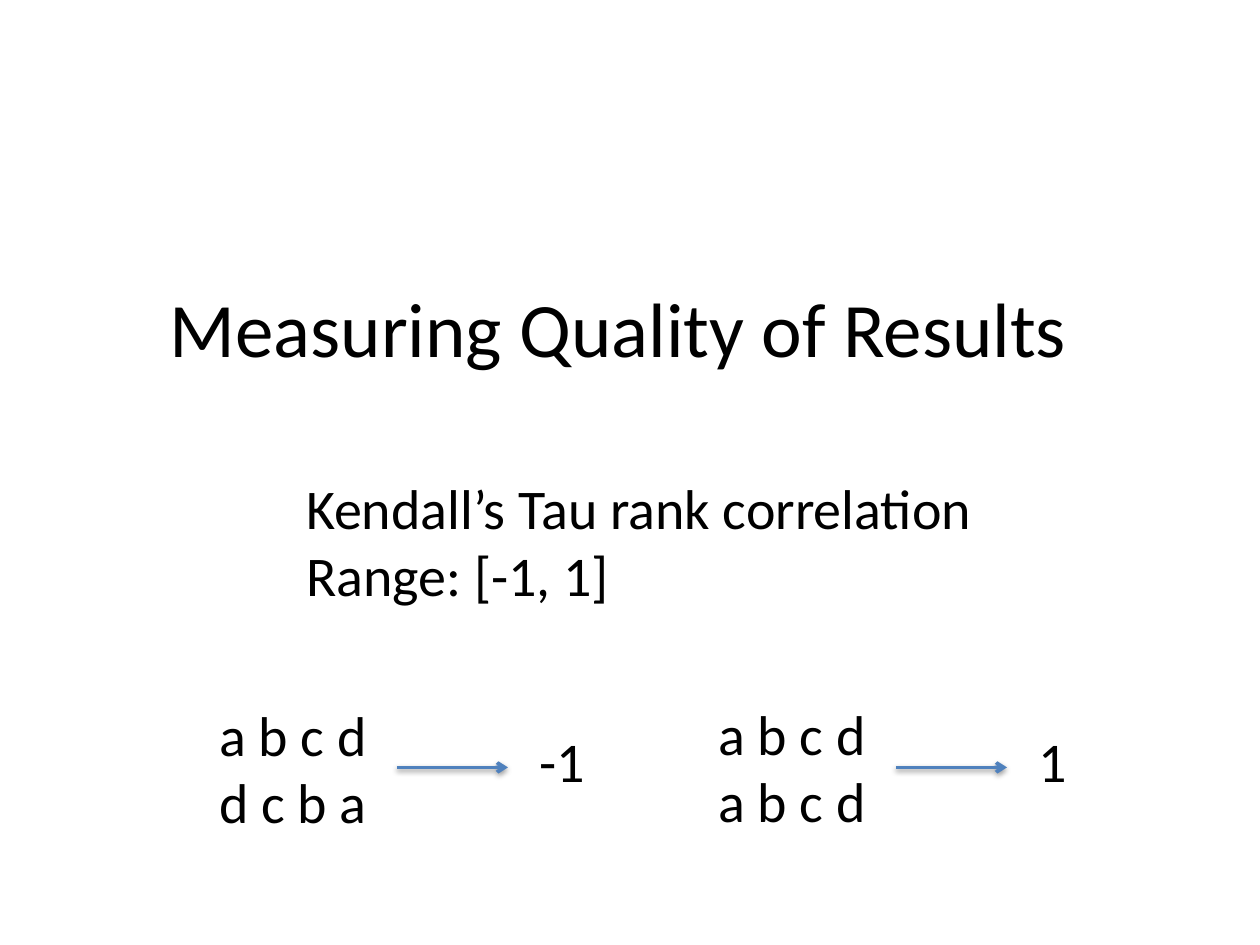
"""Build a slide on measuring result quality with Kendall's Tau."""
from dataclasses import dataclass

from pptx import Presentation, oxml
from pptx import util as u
from pptx.dml.color import RGBColor
from pptx.enum import shapes, text
from pptx.oxml import ns


@dataclass(frozen=True)
class Theme:
    """Colours, font and type sizes of the slide."""
    font: str = "Calibri"
    ink: RGBColor = RGBColor(0x00, 0x00, 0x00)
    accent: RGBColor = RGBColor(0x4F, 0x81, 0xBD)
    title: u.Pt = u.Pt(44)
    body: u.Pt = u.Pt(32)
    line: u.Pt = u.Pt(2)


THEME = Theme()
SHADOW = (
    f'<a:effectLst {ns.nsdecls("a")}>'
    '<a:outerShdw blurRad="40000" dist="20000" dir="5400000" rotWithShape="0">'
    '<a:srgbClr val="000000"><a:alpha val="38000"/></a:srgbClr>'
    '</a:outerShdw></a:effectLst>'
)


def add_text(slide, lines, left, top, width, height, size=THEME.body, wrap=False):
    """Add a text box with one paragraph per line and return its frame."""
    shape = slide.shapes.add_textbox(u.Cm(left), u.Cm(top), u.Cm(width), u.Cm(height))
    frame = shape.text_frame
    frame.word_wrap = wrap
    frame.text = "\n".join(lines)
    for paragraph in frame.paragraphs:
        paragraph.font.name = THEME.font
        paragraph.font.size = size
        paragraph.font.color.rgb = THEME.ink
    return frame


def add_title(slide, title):
    """Add the centred title."""
    frame = add_text(slide, [title], 1.04, 5, 22.86, 3.18, THEME.title, wrap=True)
    frame.vertical_anchor = text.MSO_ANCHOR.MIDDLE
    frame.paragraphs[0].alignment = text.PP_ALIGN.CENTER


def add_measure(slide, lines):
    """Add the indented description of the measure."""
    frame = add_text(slide, lines, 4.65, 9.42, 16.48, 3, wrap=True)
    for paragraph in frame.paragraphs:
        paragraph.level = 1
        properties = paragraph._p.get_or_add_pPr()
        properties.set("marL", str(u.Cm(1.27)))
        properties.set("indent", "0")


def add_arrow(slide, left, top, length):
    """Add a horizontal arrow with a soft shadow."""
    arrow = slide.shapes.add_connector(
        shapes.MSO_CONNECTOR.STRAIGHT,
        u.Cm(left), u.Cm(top), u.Cm(left + length), u.Cm(top))
    arrow.line.color.rgb = THEME.accent
    arrow.line.width = THEME.line
    head = oxml.parse_xml(f'<a:tailEnd {ns.nsdecls("a")} type="arrow"/>')
    arrow.line._get_or_add_ln().append(head)
    arrow._element.spPr.append(oxml.parse_xml(SHADOW))


def add_example(slide, left, top, rankings, result, result_width):
    """Add two rankings, an arrow and the resulting correlation."""
    add_text(slide, rankings, left, top, 3.5, 3)
    add_arrow(slide, left + 3.83, 15.47, 2.24)
    add_text(slide, [result], left + 6.45, 14.53, result_width, 1.63)


def main():
    """Build and save the slide."""
    presentation = Presentation()
    presentation.slide_width = u.Cm(25.4)
    presentation.slide_height = u.Cm(19.05)
    slide = presentation.slides.add_slide(presentation.slide_layouts[6])
    add_title(slide, "Measuring Quality of Results")
    add_measure(slide, ["Kendall’s Tau rank correlation", "Range: [-1, 1]"])
    add_example(slide, 4.17, 14, ["a b c d", "d c b a"], "-1", 1.45)
    add_example(slide, 14.23, 13.97, ["a b c d", "a b c d"], "1", 1.09)
    presentation.save("out.pptx")


if __name__ == "__main__":
    main()
